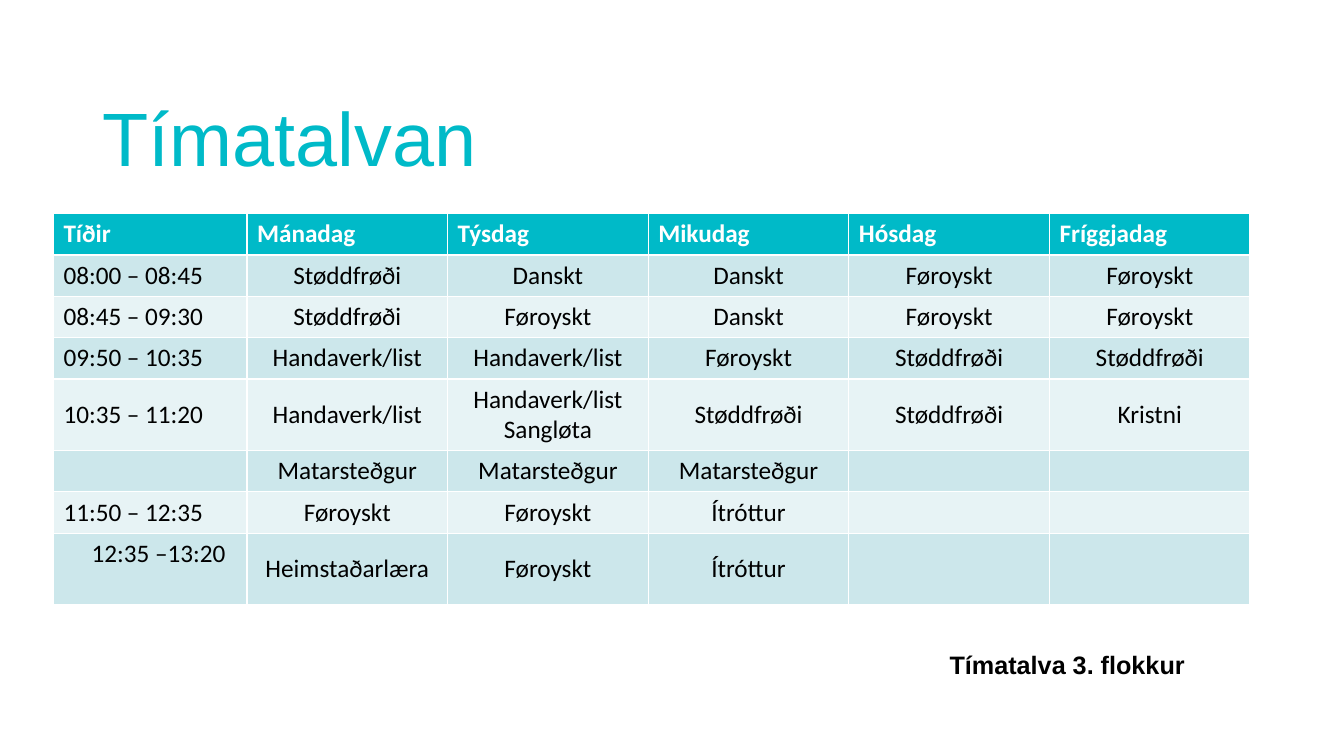
from pptx import Presentation
from pptx.dml.color import RGBColor
from pptx.enum.text import MSO_ANCHOR, PP_ALIGN
from pptx.util import Inches, Pt

LEFT, CENTER = PP_ALIGN.LEFT, PP_ALIGN.CENTER
TOP, MIDDLE, BOTTOM = MSO_ANCHOR.TOP, MSO_ANCHOR.MIDDLE, MSO_ANCHOR.BOTTOM
TEAL, BLACK, WHITE = "00BAC8", "000000", "FFFFFF"
BANDS = ["E7F3F5", "CCE7EB"]

TIMETABLE = [
    ["Tíðir", "Mánadag", "Týsdag", "Mikudag", "Hósdag", "Fríggjadag"],
    ["08:00 – 08:45", "Støddfrøði", "Danskt", "Danskt", "Føroyskt", "Føroyskt"],
    ["08:45 – 09:30", "Støddfrøði", "Føroyskt", "Danskt", "Føroyskt", "Føroyskt"],
    ["09:50 – 10:35", "Handaverk/list", "Handaverk/list", "Føroyskt", "Støddfrøði", "Støddfrøði"],
    ["10:35 – 11:20", "Handaverk/list", "Handaverk/list\nSangløta", "Støddfrøði", "Støddfrøði", "Kristni"],
    ["", "Matarsteðgur", "Matarsteðgur", "Matarsteðgur", "", ""],
    ["11:50 – 12:35", "Føroyskt", "Føroyskt", "Ítróttur", "", ""],
    ["12:35 –13:20", "Heimstaðarlæra", "Føroyskt", "Ítróttur", "", ""],
]
COLUMN_WIDTHS = [1.92] + [1.99] * 5
ROW_HEIGHTS = [0.41] * 4 + [0.71] + [0.41] * 2 + [0.71]


def color(value):
    return RGBColor.from_string(value)


def write(text_frame, text, font_name, size, text_color, bold=False, alignment=LEFT):
    text_frame.text = text
    for paragraph in text_frame.paragraphs:
        paragraph.alignment = alignment
        for run in paragraph.runs:
            run.font.name = font_name
            run.font.size = Pt(size)
            run.font.bold = bold
            run.font.color.rgb = color(text_color)


presentation = Presentation()
presentation.slide_width = Inches(13.33)
presentation.slide_height = Inches(7.5)
slide = presentation.slides.add_slide(presentation.slide_layouts[5])

title = slide.shapes.title
title.left, title.top = Inches(0.92), Inches(0.4)
title.width, title.height = Inches(11.5), Inches(1.45)
title.text_frame.vertical_anchor = BOTTOM
write(title.text_frame, "Tímatalvan", "Arial", 54, TEAL)

table = slide.shapes.add_table(
    len(ROW_HEIGHTS), len(COLUMN_WIDTHS),
    Inches(0.53), Inches(2.12), Inches(sum(COLUMN_WIDTHS)), Inches(sum(ROW_HEIGHTS)),
).table
for column, width in zip(table.columns, COLUMN_WIDTHS):
    column.width = Inches(width)
for row, height in zip(table.rows, ROW_HEIGHTS):
    row.height = Inches(height)

for row_index, lessons in enumerate(TIMETABLE):
    header = row_index == 0
    for column_index, text in enumerate(lessons):
        cell = table.cell(row_index, column_index)
        cell.vertical_anchor = MIDDLE
        cell.fill.solid()
        cell.fill.fore_color.rgb = color(TEAL if header else BANDS[row_index % 2])
        write(cell.text_frame, text, "Calibri", 18, WHITE if header else BLACK, header,
              LEFT if header or column_index == 0 else CENTER)

last_time = table.cell(len(TIMETABLE) - 1, 0)
last_time.vertical_anchor = TOP
last_time.margin_left = Inches(0.38)

caption = slide.shapes.add_textbox(Inches(9.32), Inches(6.39), Inches(3), Inches(0.71))
caption.text_frame.word_wrap = True
write(caption.text_frame, "Tímatalva 3. flokkur", "Arial", 18, BLACK, True)

presentation.save("out.pptx")
